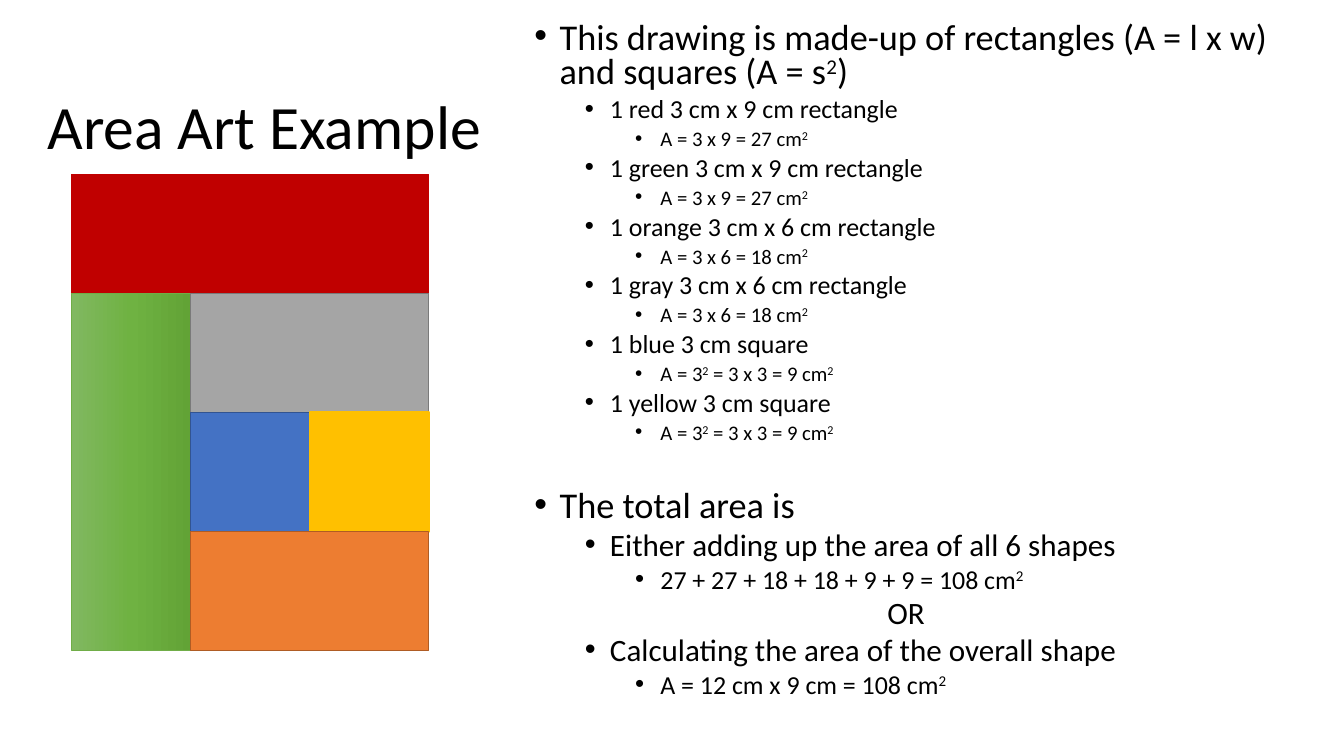
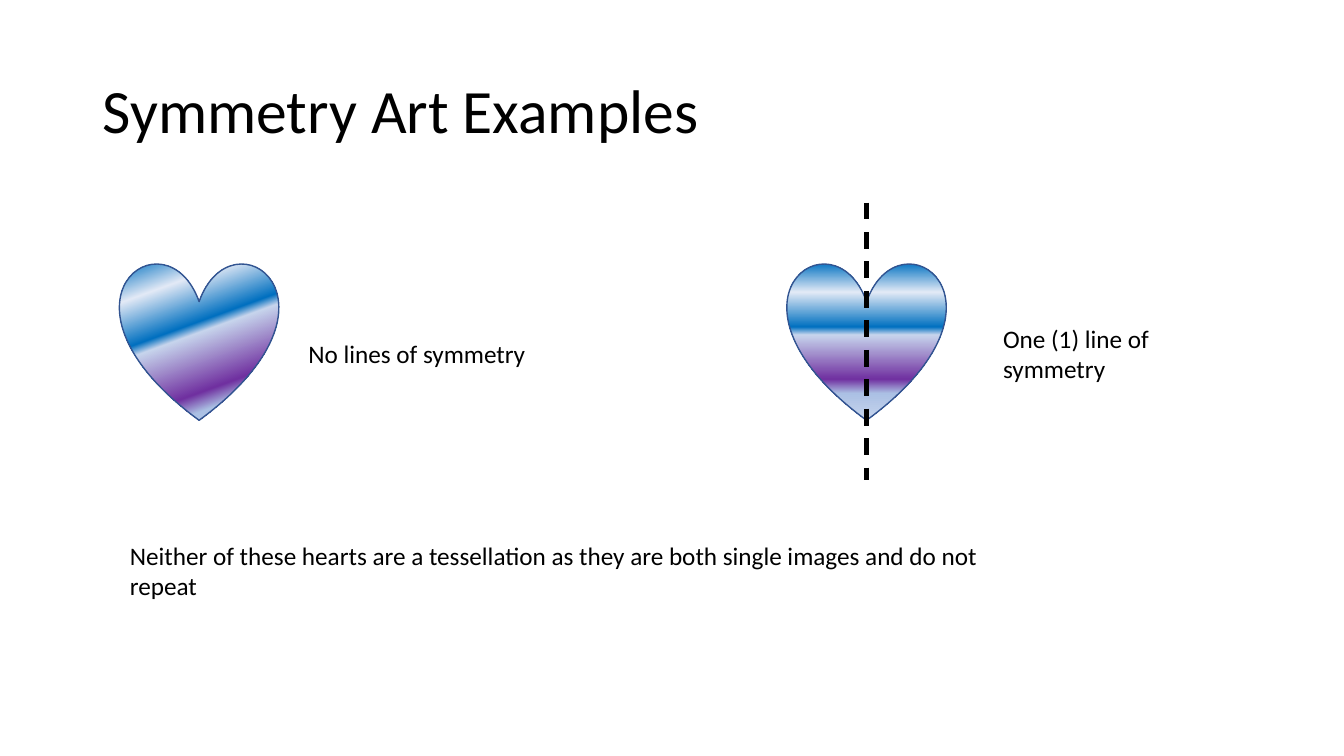
from lxml import etree
from pptx import Presentation
from pptx import util as u
from pptx.dml.color import RGBColor
from pptx.enum import dml, shapes, text
from pptx.oxml.ns import qn

WIDTH, HEIGHT = u.Inches(13.33), u.Inches(7.5)
FONT = "Calibri"
TITLE_LAYOUT, CONTENT_LAYOUT = 5, 1

BLACK = RGBColor(0x00, 0x00, 0x00)
RED = RGBColor(0xC0, 0x00, 0x00)
GREEN = RGBColor(0x70, 0xAD, 0x47)
GREEN_LIGHT = RGBColor(0x81, 0xB8, 0x61)
GREEN_MID = RGBColor(0x6F, 0xB2, 0x42)
GREEN_DARK = RGBColor(0x62, 0xA3, 0x36)
GRAY = RGBColor(0xA5, 0xA5, 0xA5)
GRAY_EDGE = RGBColor(0x7A, 0x7A, 0x7A)
BLUE = RGBColor(0x44, 0x72, 0xC4)
BLUE_EDGE = RGBColor(0x32, 0x54, 0x91)
YELLOW = RGBColor(0xFF, 0xC0, 0x00)
ORANGE = RGBColor(0xED, 0x7D, 0x31)
ORANGE_EDGE = RGBColor(0xAF, 0x5C, 0x24)
DEEP_BLUE = RGBColor(0x00, 0x70, 0xC0)
PALE_BLUE = RGBColor(0xE3, 0xEA, 0xF6)
SOFT_BLUE = RGBColor(0xC7, 0xD5, 0xED)
MID_BLUE = RGBColor(0xAB, 0xC0, 0xE4)
PURPLE = RGBColor(0x70, 0x30, 0xA0)

GREEN_BLEND = [(0, GREEN_LIGHT), (50, GREEN_MID), (100, GREEN_DARK)]
HEART_BLEND = [(0, DEEP_BLUE), (19, PALE_BLUE), (41, DEEP_BLUE), (46, SOFT_BLUE),
               (74, PURPLE), (83, MID_BLUE), (100, SOFT_BLUE)]

# The artwork stands on a grid whose cell is a true 3 cm square
CELL = u.Cm(3)
ART_LEFT, ART_TOP = u.Inches(0.71), u.Inches(1.73)
# column, row, columns wide, rows high, rotation, fill, edge, edge width
ART_TILES = [
    (0, 0, 3, 1, 0, RED, RED, 1),
    (-1, 2, 3, 1, 270, GREEN_BLEND, GREEN, 0.5),
    (1, 1, 2, 1, 0, GRAY, GRAY_EDGE, 1),
    (1, 2, 1, 1, 0, BLUE, BLUE_EDGE, 1),
    (2, 2, 1, 1, 0, YELLOW, YELLOW, 1.5),
    (1, 3, 2, 1, 0, ORANGE, ORANGE_EDGE, 1),
]

# Each piece of the artwork with its area; ² becomes a raised 2
PIECES = [
    ("1 red 3 cm x 9 cm rectangle", "A = 3 x 9 = 27 cm²"),
    ("1 green 3 cm x 9 cm rectangle", "A = 3 x 9 = 27 cm²"),
    ("1 orange 3 cm x 6 cm rectangle", "A = 3 x 6 = 18 cm²"),
    ("1 gray 3 cm x 6 cm rectangle", "A = 3 x 6 = 18 cm²"),
    ("1 blue 3 cm square", "A = 3² = 3 x 3 = 9 cm²"),
    ("1 yellow 3 cm square", "A = 3² = 3 x 3 = 9 cm²"),
]


def place(part, left, top, width, height):
    part.left, part.top = u.Inches(left), u.Inches(top)
    part.width, part.height = u.Inches(width), u.Inches(height)


def add_run(paragraph, words, size, raised=False):
    run = paragraph.add_run()
    run.text = words
    run.font.name, run.font.size = FONT, u.Pt(size)
    run.font.color.rgb = BLACK
    if raised:
        run._r.get_or_add_rPr().set("baseline", "30000")


def add_math(paragraph, words, size):
    """Write words run by run, raising every ²."""
    for index, piece in enumerate(words.split("²")):
        if index:
            add_run(paragraph, "2", size, raised=True)
        if piece:
            add_run(paragraph, piece, size)


def add_title(slide, words, left, top):
    title = slide.shapes.title
    place(title, left, top, 11.5, 1.45)
    frame = title.text_frame
    frame.auto_size = text.MSO_AUTO_SIZE.NONE
    frame.vertical_anchor = text.MSO_ANCHOR.MIDDLE
    heading = frame.paragraphs[0]
    heading.alignment = text.PP_ALIGN.LEFT
    heading.line_spacing = 0.9
    add_run(heading, words, 44)


def add_item(frame, level, words, size, before=None, indent=None):
    """Add a bulleted line, or a plain one when an indent is given."""
    first = frame.paragraphs[0]
    item = frame.add_paragraph() if first.runs else first
    item.level = level
    item.line_spacing = 0.8
    item.space_before = u.Pt(before or (5 if level else 10))
    item.space_after = u.Pt(0)
    props = item._p.get_or_add_pPr()
    bulleted = indent is None
    props.set("marL", str(u.Inches(0.25 + 0.5 * level if bulleted else indent)))
    props.set("indent", str(u.Inches(-0.25 if bulleted else 0)))
    if bulleted:
        etree.SubElement(props, qn("a:buFont"), typeface="Arial")
        etree.SubElement(props, qn("a:buChar"), char="•")
    else:
        etree.SubElement(props, qn("a:buNone"))
    add_math(item, words, size)


def blend(shape, stops, angle):
    shape.fill.gradient()
    gradient = shape._element.spPr.find(qn("a:gradFill"))
    stop_list = gradient.find(qn("a:gsLst"))
    for old_stop in list(stop_list):
        stop_list.remove(old_stop)
    for percent, colour in stops:
        stop = etree.SubElement(stop_list, qn("a:gs"), pos=str(percent * 1000))
        etree.SubElement(stop, qn("a:srgbClr"), val=str(colour))
    gradient.find(qn("a:lin")).set("ang", str(angle * 60000))


def add_figure(slide, kind, box, paint, edge, edge_width, angle=90):
    """Add a shape filled with one colour or with a list of gradient stops."""
    figure = slide.shapes.add_shape(kind, *box)
    figure.shadow.inherit = False
    if isinstance(paint, list):
        blend(figure, paint, angle)
    else:
        figure.fill.solid()
        figure.fill.fore_color.rgb = paint
    figure.line.color.rgb = edge
    figure.line.width = u.Pt(edge_width)
    return figure


def add_caption(slide, words, left, top, width, height):
    caption = slide.shapes.add_textbox(0, 0, 0, 0)
    place(caption, left, top, width, height)
    frame = caption.text_frame
    frame.word_wrap = True
    frame.auto_size = text.MSO_AUTO_SIZE.SHAPE_TO_FIT_TEXT
    add_run(frame.paragraphs[0], words, 18)


def add_mirror_line(slide, x, top, bottom):
    mirror = slide.shapes.add_connector(shapes.MSO_CONNECTOR.STRAIGHT, x, top, x, bottom)
    mirror.line.color.rgb = BLACK
    mirror.line.width = u.Pt(3)
    mirror.line.dash_style = dml.MSO_LINE.DASH
    etree.SubElement(mirror._element.spPr, qn("a:effectLst"))


def build_area_slide(deck):
    slide = deck.slides.add_slide(deck.slide_layouts[CONTENT_LAYOUT])
    add_title(slide, "Area Art Example", 0.37, 0.56)

    # Artwork
    for column, row, wide, high, turn, paint, edge, edge_width in ART_TILES:
        box = (ART_LEFT + column * CELL, ART_TOP + row * CELL, wide * CELL, high * CELL)
        tile = add_figure(slide, shapes.MSO_SHAPE.RECTANGLE, box, paint, edge, edge_width)
        tile.rotation = turn

    # Area of each piece
    body = slide.placeholders[1]
    place(body, 5.2, 0.17, 7.76, 7.17)
    frame = body.text_frame
    frame.auto_size = text.MSO_AUTO_SIZE.NONE
    add_item(frame, 0, "This drawing is made-up of rectangles (A = l x w) and squares (A = s²)", 25.9)
    for piece, area in PIECES:
        add_item(frame, 1, piece, 18.5)
        add_item(frame, 2, area, 14.8)

    # Total area, found in two ways
    add_item(frame, 0, "The total area is", 25.9, before=33)
    add_item(frame, 1, "Either adding up the area of all 6 shapes", 22.2)
    add_item(frame, 2, "27 + 27 + 18 + 18 + 9 + 9 = 108 cm²", 18.5)
    add_item(frame, 1, "OR", 22.2, indent=3.5)
    add_item(frame, 1, "Calculating the area of the overall shape", 22.2)
    add_item(frame, 2, "A = 12 cm x 9 cm = 108 cm²", 18.5)


def build_symmetry_slide(deck):
    slide = deck.slides.add_slide(deck.slide_layouts[TITLE_LAYOUT])
    add_title(slide, "Symmetry Art Examples", 0.92, 0.4)

    # Hearts: slanted stripes, then level stripes
    size = u.Inches(1.57)
    for left, angle in ((1.19, 70), (7.81, 90)):
        box = (u.Inches(left), u.Inches(2.6), size, size)
        heart = add_figure(slide, shapes.MSO_SHAPE.HEART, box, HEART_BLEND, BLUE_EDGE, 1, angle)

    # Captions
    add_caption(slide, "No lines of symmetry", 2.96, 3.31, 2.57, 0.4)
    add_caption(slide, "One (1) line of symmetry", 9.85, 3.16, 2.57, 0.71)
    add_mirror_line(slide, heart.left + size // 2, u.Inches(2.01), u.Inches(4.76))
    add_caption(slide, "Neither of these hearts are a tessellation as they are both "
                       "single images and do not repeat", 1.19, 5.31, 9.22, 0.71)


def main():
    deck = Presentation()
    deck.slide_width, deck.slide_height = WIDTH, HEIGHT
    build_area_slide(deck)
    build_symmetry_slide(deck)
    deck.save("out.pptx")


if __name__ == "__main__":
    main()
